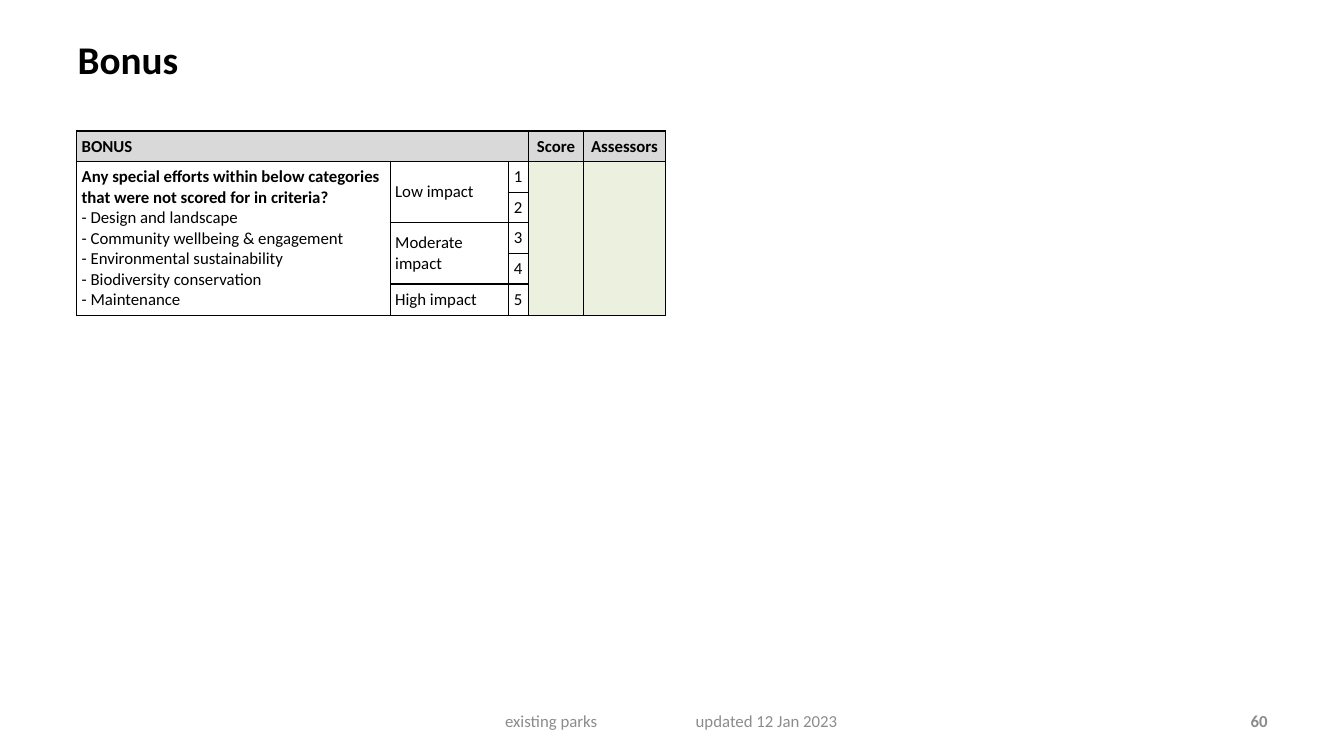
from dataclasses import dataclass

import pptx
import pptx.dml.color
import pptx.enum.text
import pptx.oxml
import pptx.oxml.ns
import pptx.util

Inches = pptx.util.Inches
Align = pptx.enum.text.PP_ALIGN
Anchor = pptx.enum.text.MSO_ANCHOR
NS = pptx.oxml.ns.nsdecls("a")

BLACK, GREY = "000000", "8C8C8C"
HEADER_FILL, SCORE_FILL = "D9D9D9", "EBF1DE"
COLUMN_WIDTHS = [3.11, 1.17, 0.2, 0.55, 0.81]
ROW_COUNT, ROW_HEIGHT = 6, 0.3
INSET = 0.05


@dataclass
class Cell:
    row: int
    col: int
    text: str = ""
    rows: int = 1
    cols: int = 1
    fill: str = ""
    bold: bool = False
    align: Align = Align.LEFT


CATEGORIES = [
    "Design and landscape",
    "Community wellbeing & engagement",
    "Environmental sustainability",
    "Biodiversity conservation",
    "Maintenance",
]

CELLS = [
    Cell(0, 0, "BONUS", cols=3, fill=HEADER_FILL, bold=True),
    Cell(0, 3, "Score", fill=HEADER_FILL, bold=True, align=Align.CENTER),
    Cell(0, 4, "Assessors", fill=HEADER_FILL, bold=True, align=Align.CENTER),
    Cell(1, 0, "Any special efforts within below categories "
         "that were not scored for in criteria?", rows=5, bold=True),
    Cell(1, 1, "Low impact", rows=2),
    Cell(3, 1, "Moderate impact", rows=2),
    Cell(5, 1, "High impact"),
    Cell(1, 3, rows=5, fill=SCORE_FILL),
    Cell(1, 4, rows=5, fill=SCORE_FILL),
] + [Cell(n, 2, str(n), align=Align.CENTER) for n in range(1, 6)]


def rgb(color: str) -> pptx.dml.color.RGBColor:
    return pptx.dml.color.RGBColor.from_string(color)


def add_run(p, text: str, size: float = 12, color: str = BLACK, bold: bool = False) -> None:
    r = p.add_run()
    r.text = text
    r.font.name = "Calibri"
    r.font.size = pptx.util.Pt(size)
    r.font.bold = bold
    r.font.color.rgb = rgb(color)


def add_box(slide, left: float, width: float, inset: float, align: Align):
    sp = slide.shapes.add_textbox(Inches(left), Inches(6.95), Inches(width), Inches(0.4))
    tf = sp.text_frame
    tf.word_wrap = True
    tf.vertical_anchor = Anchor.MIDDLE
    tf.margin_left = Inches(inset)
    p = tf.paragraphs[0]
    p.alignment = align
    return p


def format_cell(cell) -> None:
    cell.margin_left = cell.margin_right = Inches(INSET)
    cell.margin_top = cell.margin_bottom = Inches(INSET)
    cell.vertical_anchor = Anchor.MIDDLE
    tc_pr = cell._tc.get_or_add_tcPr()
    for side in "LRTB":
        tc_pr.append(pptx.oxml.parse_xml(
            f'<a:ln{side} {NS} w="12700"><a:solidFill><a:srgbClr val="{BLACK}"/>'
            f'</a:solidFill></a:ln{side}>'))
    cell.fill.background()


def fill_cell(table, spec: Cell) -> None:
    cell = table.cell(spec.row, spec.col)
    if spec.rows > 1 or spec.cols > 1:
        cell.merge(table.cell(spec.row + spec.rows - 1, spec.col + spec.cols - 1))
    if spec.fill:
        cell.fill.solid()
        cell.fill.fore_color.rgb = rgb(spec.fill)
    if spec.text:
        p = cell.text_frame.paragraphs[0]
        p.alignment = spec.align
        add_run(p, spec.text, bold=spec.bold)


def add_bonus_table(slide) -> None:
    table = slide.shapes.add_table(
        ROW_COUNT, len(COLUMN_WIDTHS), Inches(0.76), Inches(1.3),
        Inches(sum(COLUMN_WIDTHS)), Inches(ROW_COUNT * ROW_HEIGHT)).table
    table.first_row = table.horz_banding = False
    for column, width in zip(table.columns, COLUMN_WIDTHS):
        column.width = Inches(width)
    for cell in table.iter_cells():
        format_cell(cell)
    for spec in CELLS:
        fill_cell(table, spec)
    p = table.cell(1, 0).text_frame.paragraphs[0]
    for category in CATEGORIES:
        p.add_line_break()
        add_run(p, f"- {category}")
    for line_break in p._p.findall(pptx.oxml.ns.qn("a:br")):
        line_break.append(pptx.oxml.parse_xml(f'<a:rPr {NS} sz="1200"/>'))


def add_title(slide) -> None:
    sp = slide.shapes.title
    sp.left, sp.top = Inches(0.67), Inches(0.3)
    sp.width, sp.height = Inches(10.36), Inches(0.99)
    tf = sp.text_frame
    tf.vertical_anchor = Anchor.TOP
    p = tf.paragraphs[0]
    p.alignment = Align.LEFT
    add_run(p, "Bonus", size=28, bold=True)


def add_footer(slide) -> None:
    p = add_box(slide, 4.56, 4.22, 0.45, Align.LEFT)
    p._p.get_or_add_pPr().append(pptx.oxml.parse_xml(
        f'<a:tabLst {NS}><a:tab pos="{Inches(1.89)}" algn="l"/></a:tabLst>'))
    add_run(p, "existing parks\tupdated 12 Jan 2023", color=GREY)
    p = add_box(slide, 9.56, 3.11, 0.1, Align.RIGHT)
    add_run(p, "60", color=GREY, bold=True)


def main() -> None:
    prs = pptx.Presentation()
    prs.slide_width, prs.slide_height = Inches(13.33), Inches(7.5)
    slide = prs.slides.add_slide(prs.slide_layouts[5])
    add_title(slide)
    add_bonus_table(slide)
    add_footer(slide)
    prs.save("out.pptx")


if __name__ == "__main__":
    main()
